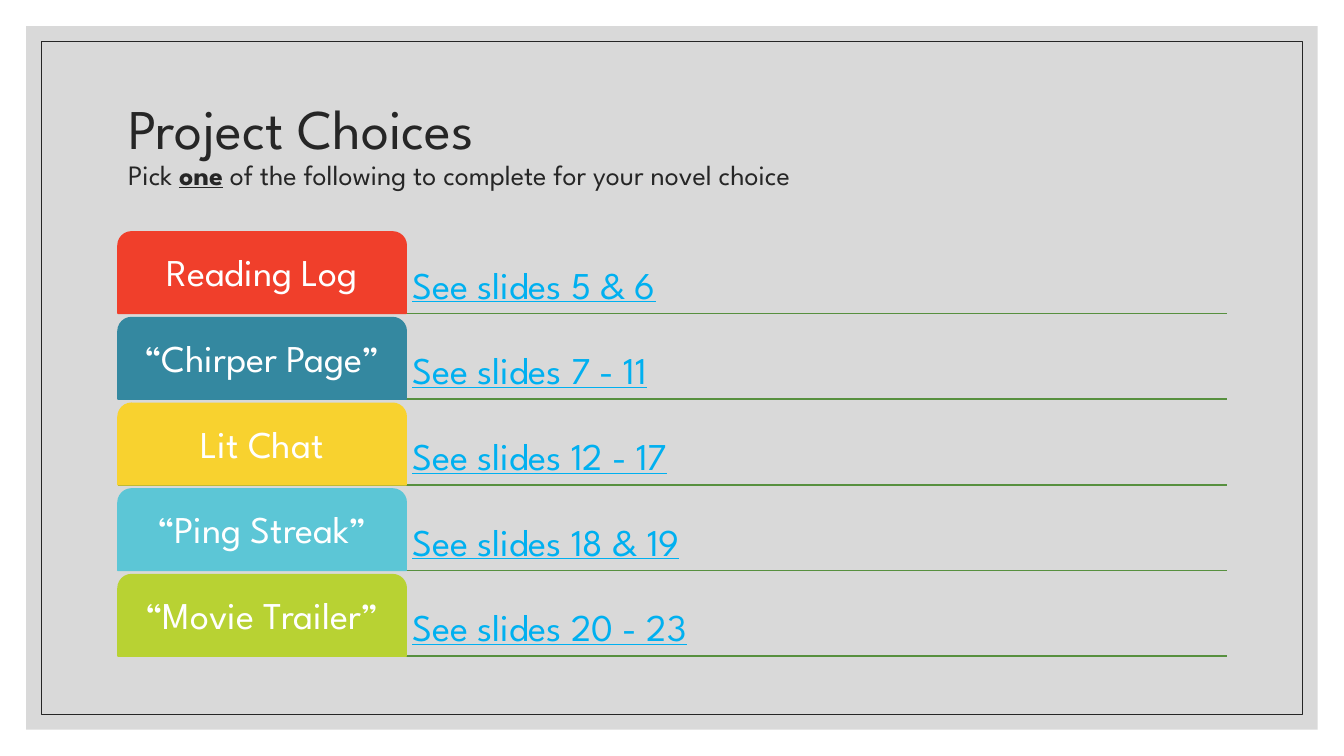
from dataclasses import dataclass

from lxml.etree import SubElement
from pptx import Presentation
from pptx.dml.color import RGBColor
from pptx.enum.shapes import MSO_CONNECTOR, MSO_SHAPE
from pptx.enum.text import MSO_ANCHOR as Anchor, MSO_AUTO_SIZE, PP_ALIGN as Align
from pptx.oxml.ns import qn
from pptx.util import Inches, Pt


@dataclass(frozen=True)
class Theme:
    font: str = "League Spartan"
    ink: str = "262626"
    panel: str = "D9D9D9"
    rule: str = "57903F"
    link: str = "00B0F0"
    white: str = "FFFFFF"
    title_size: int = 40
    subtitle_size: int = 20
    row_size: int = 27


THEME = Theme()

CHOICES = [
    ("Reading Log", "See slides 5 & 6", "F03F2B"),
    ("“Chirper Page”", "See slides 7 - 11", "3488A0"),
    ("Lit Chat", "See slides 12 - 17", "F8D22F"),
    ("“Ping Streak”", "See slides 18 & 19", "5CC6D6"),
    ("“Movie Trailer”", "See slides 20 - 23", "B8D233"),
]

LEFT, RIGHT = 1.17, 12.17
TAB_WIDTH = 2.86
FIRST_ROW_TOP, ROW_HEIGHT, ROW_STEP = 2.3, 0.81, 0.85
ROW_INSET = 0.06


def rgb(value):
    return RGBColor.from_string(value)


def style_run(run, size, color):
    run.font.name = THEME.font
    run.font.size = Pt(size)
    run.font.color.rgb = rgb(color)


def add_frame(slide, margin, fill=None, line=None):
    """Add a rectangle set in from the slide edges by the margin."""
    shape = slide.shapes.add_shape(
        MSO_SHAPE.RECTANGLE, Inches(margin), Inches(margin),
        Inches(13.33 - 2 * margin), Inches(7.5 - 2 * margin))
    shape.shadow.inherit = False
    if fill:
        shape.fill.solid()
        shape.fill.fore_color.rgb = rgb(fill)
    else:
        shape.fill.background()
    if line:
        shape.line.color.rgb = rgb(line)
        shape.line.width = Pt(0.5)
    else:
        shape.line.fill.background()


def format_title(slide):
    title = slide.shapes.title
    title.left, title.top = Inches(LEFT), Inches(0.7)
    title.width, title.height = Inches(RIGHT - LEFT), Inches(1.5)
    frame = title.text_frame
    frame.auto_size = MSO_AUTO_SIZE.NONE
    frame.word_wrap = True
    frame.vertical_anchor = Anchor.MIDDLE
    paragraph = frame.paragraphs[0]
    paragraph.alignment = Align.LEFT
    paragraph.line_spacing = 0.9

    heading = paragraph.add_run()
    heading.text = "Project Choices"
    style_run(heading, THEME.title_size, THEME.ink)
    paragraph.add_line_break()
    for text in ("Pick ", "one", " of the following to complete for your novel choice"):
        run = paragraph.add_run()
        run.text = text
        style_run(run, THEME.subtitle_size, THEME.ink)
        run.font.bold = run.font.underline = text == "one"
    # The frames are added after the placeholder, so bring it to the front.
    slide.shapes._spTree.append(title._element)


def add_rule(slide, y):
    rule = slide.shapes.add_connector(
        MSO_CONNECTOR.STRAIGHT, Inches(LEFT), Inches(y), Inches(RIGHT), Inches(y))
    rule.line.color.rgb = rgb(THEME.rule)
    rule.line.width = Pt(1)
    SubElement(rule._element.spPr, qn("a:effectLst"))


def set_row_text(shape, text, color, alignment, anchor):
    frame = shape.text_frame
    frame.word_wrap = True
    frame.margin_left = frame.margin_right = Inches(ROW_INSET)
    frame.margin_top = frame.margin_bottom = Inches(ROW_INSET)
    frame.vertical_anchor = anchor
    frame.text = text
    paragraph = frame.paragraphs[0]
    paragraph.alignment = alignment
    paragraph.line_spacing = 0.9
    style_run(paragraph.runs[0], THEME.row_size, color)


def add_tab(slide, top, name, color):
    tab = slide.shapes.add_shape(
        MSO_SHAPE.ROUND_2_SAME_RECTANGLE, Inches(LEFT), Inches(top),
        Inches(TAB_WIDTH), Inches(ROW_HEIGHT))
    tab.shadow.inherit = False
    tab.fill.solid()
    tab.fill.fore_color.rgb = rgb(color)
    tab.line.color.rgb = rgb(color)
    tab.line.width = Pt(1)
    set_row_text(tab, name, THEME.white, Align.CENTER, Anchor.MIDDLE)


def add_reference(slide, top, text):
    left = LEFT + TAB_WIDTH
    box = slide.shapes.add_textbox(
        Inches(left), Inches(top), Inches(RIGHT - left), Inches(ROW_HEIGHT))
    set_row_text(box, text, THEME.link, Align.LEFT, Anchor.BOTTOM)
    box.text_frame.paragraphs[0].runs[0].font.underline = True


def main():
    presentation = Presentation()
    presentation.slide_width = Inches(13.33)
    presentation.slide_height = Inches(7.5)
    slide = presentation.slides.add_slide(presentation.slide_layouts[5])

    add_frame(slide, 0.26, fill=THEME.panel)
    add_frame(slide, 0.41, line=THEME.ink)
    format_title(slide)
    for index, (name, reference, color) in enumerate(CHOICES):
        top = FIRST_ROW_TOP + index * ROW_STEP
        add_rule(slide, top + ROW_HEIGHT)
        add_reference(slide, top, reference)
        add_tab(slide, top, name, color)

    presentation.save("out.pptx")


if __name__ == "__main__":
    main()
